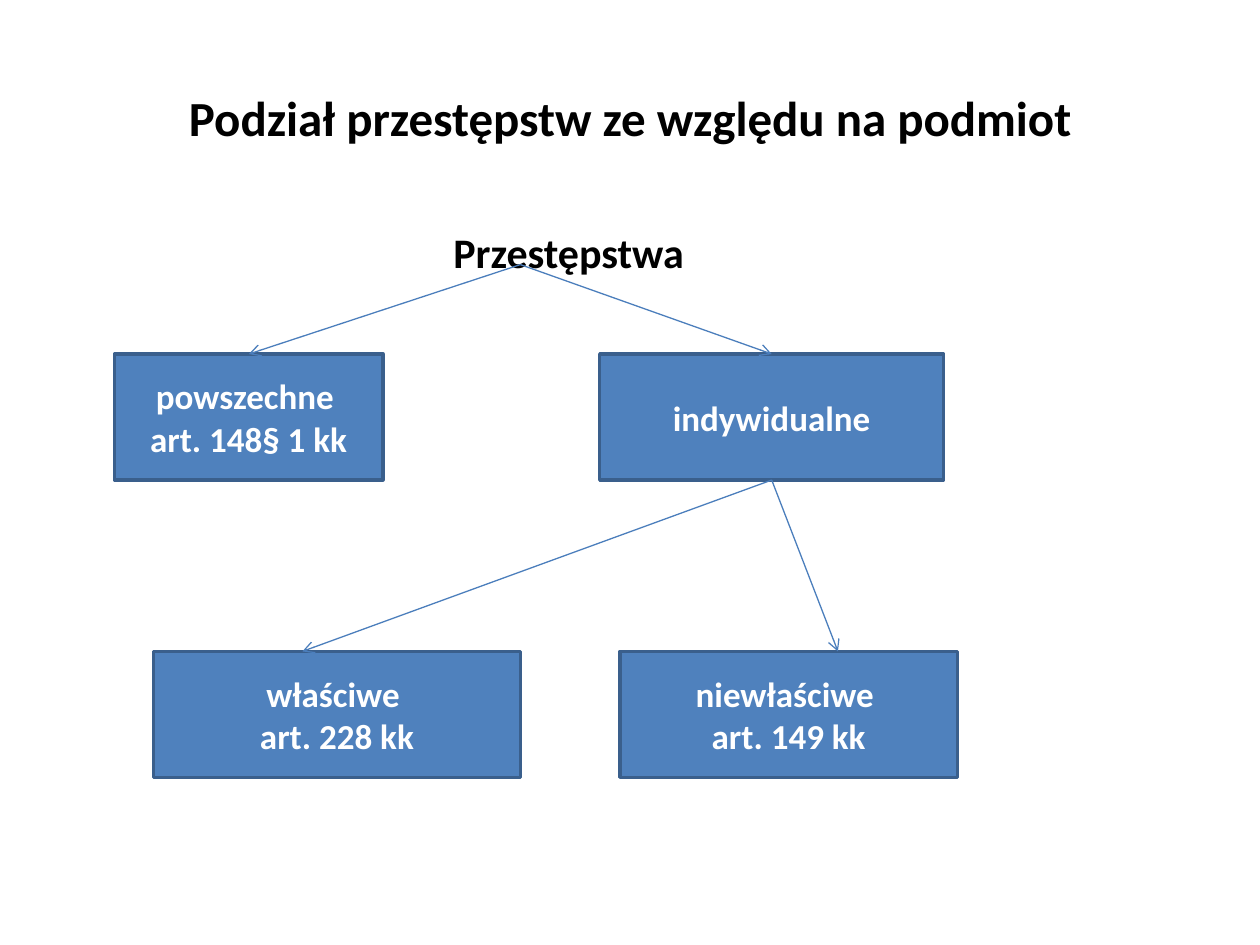
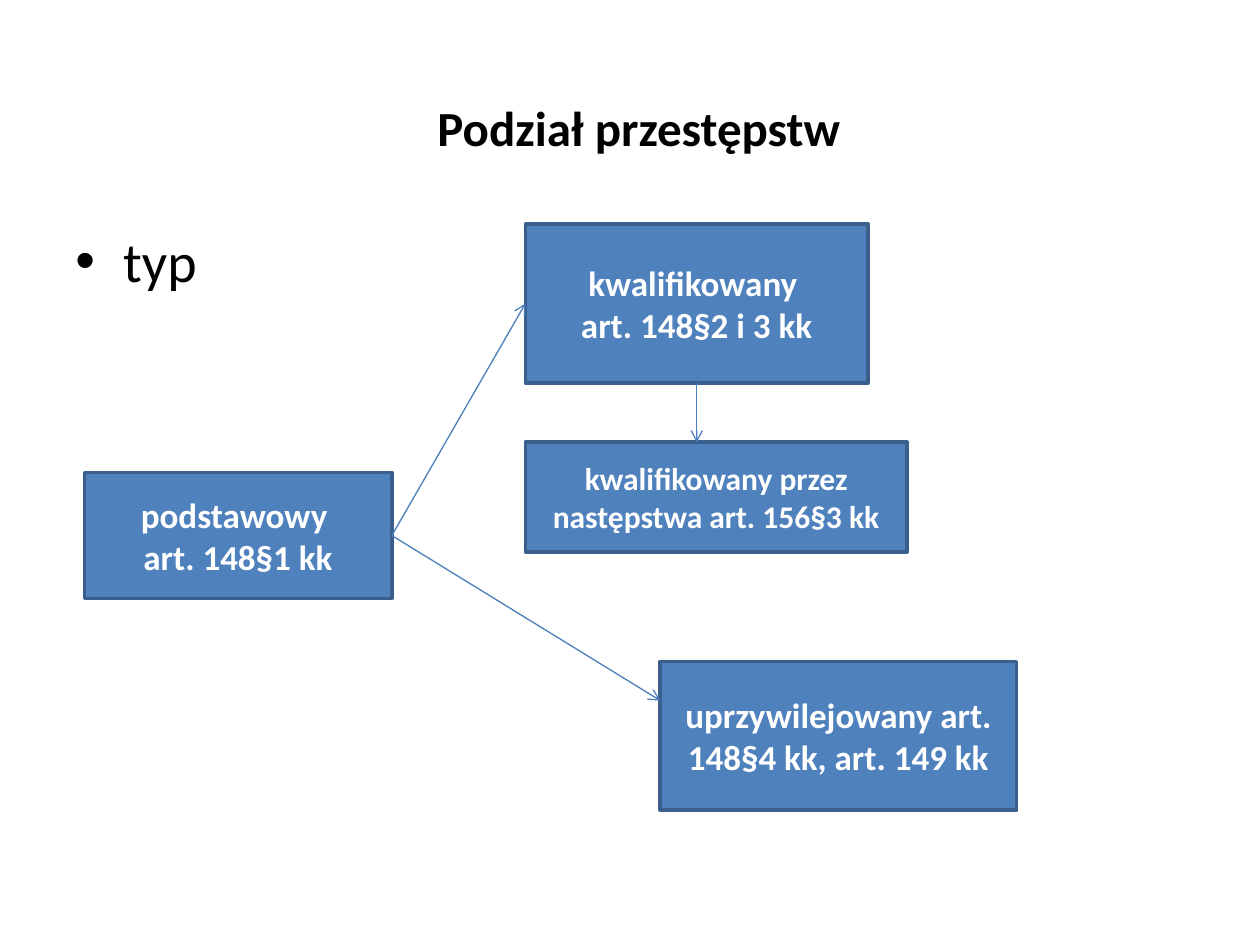
from lxml import etree
from pptx import Presentation
from pptx.dml.color import RGBColor
from pptx.enum import shapes, text
from pptx.oxml import ns
from pptx.util import Inches, Pt

FONT = "Calibri"
BLACK = RGBColor(0, 0, 0)
WHITE = RGBColor(255, 255, 255)
BLUE = RGBColor(0x4F, 0x81, 0xBD)
EDGE = RGBColor(0x3A, 0x5F, 0x8C)
LINE = RGBColor(0x4B, 0x7E, 0xBC)
TOP, LEFT, FOOT, RIGHT = range(4)  # connection sites of a rectangle


def write(frame, words, size=20, color=WHITE, bold=True,
          align=text.PP_ALIGN.CENTER, anchor=text.MSO_ANCHOR.MIDDLE):
    """Fill a text frame, one paragraph for each line of words."""
    frame.word_wrap = True
    frame.vertical_anchor = anchor
    frame.text = words
    for par in frame.paragraphs:
        par.alignment = align
        font = par.runs[0].font
        font.name, font.size, font.bold = FONT, Pt(size), bold
        font.color.rgb = color


def label(slide, words, left, top, wide, high, **style):
    area = slide.shapes.add_textbox(*map(Inches, (left, top, wide, high)))
    write(area.text_frame, words, color=BLACK, **style)
    return area.text_frame


def title(slide, words, left=0.5, top=0.3):
    label(slide, words, left, top, 9, 1.25, size=28)


def body(slide, words, indent, bullet=None, **style):
    frame = label(slide, words, 0.5, 1.75, 9, 4.95, anchor=text.MSO_ANCHOR.TOP,
                  align=text.PP_ALIGN.LEFT, **style)
    props = frame.paragraphs[0]._p.get_or_add_pPr()
    props.set("marL", str(Inches(indent)))
    if bullet:
        props.set("indent", str(-Inches(indent)))
        etree.SubElement(props, ns.qn("a:buFont")).set("typeface", "Arial")
        etree.SubElement(props, ns.qn("a:buChar")).set("char", bullet)


def box(slide, words, left, top, wide, high=1, **style):
    rect = slide.shapes.add_shape(shapes.MSO_SHAPE.RECTANGLE,
                                  *map(Inches, (left, top, wide, high)))
    rect.shadow.inherit = False
    rect.fill.solid()
    rect.fill.fore_color.rgb = BLUE
    rect.line.color.rgb = EDGE
    rect.line.width = Pt(2)
    write(rect.text_frame, words, **style)
    return rect


def arrow(slide, start, end, source=None, target=None):
    """Draw an arrow; source and target are (box, site) pairs to glue to."""
    link = slide.shapes.add_connector(shapes.MSO_CONNECTOR.STRAIGHT,
                                      *map(Inches, start + end))
    if source:
        link.begin_connect(*source)
    if target:
        link.end_connect(*target)
    link.line.color.rgb = LINE
    link.line.width = Pt(0.75)
    tip = etree.SubElement(link.line._get_or_add_ln(), ns.qn("a:tailEnd"))
    tip.set("type", "arrow")
    etree.SubElement(link._element.spPr, ns.qn("a:effectLst"))


def subject(slide):
    """Offences divided by who commits them."""
    title(slide, "Podział przestępstw ze względu na podmiot")
    body(slide, "Przestępstwa", 3, size=24)
    row, low, root, hub = 2.81, 5.17, (4.13, 2.1), (6.13, 3.81)
    common = box(slide, "powszechne \nart. 148§ 1 kk", 0.91, row, 2.13)
    single = box(slide, "indywidualne", 4.76, row, 2.73)
    box(slide, "właściwe \nart. 228 kk", 1.22, low, 2.91)
    box(slide, "niewłaściwe \nart. 149 kk", 4.92, low, 2.68)
    arrow(slide, root, (1.97, row), target=(common, TOP))
    arrow(slide, root, (6.13, row), target=(single, TOP))
    for x in (2.4, 6.65):
        arrow(slide, hub, (x, low), source=(single, FOOT))


def kinds(slide):
    """Basic, aggravated and privileged types of offence."""
    title(slide, "Podział przestępstw", left=0.57, top=0.38)
    body(slide, "typ", 0.38, bullet="•", size=32, bold=False)
    basic = box(slide, "podstawowy \nart. 148§1 kk", 0.67, 3.75, 2.44)
    grave = box(slide, "kwalifikowany \nart. 148§2 i 3 kk",
                4.17, 1.78, 2.72, 1.26)
    box(slide, "uprzywilejowany art. 148§4 kk, art. 149 kk",
        5.24, 5.25, 2.83, 1.18)
    box(slide, "kwalifikowany przez następstwa art. 156§3 kk",
        4.17, 3.51, 3.03, 0.87, size=18)
    hub = (3.11, 4.25)
    arrow(slide, hub, (4.17, 2.41), (basic, RIGHT), (grave, LEFT))
    arrow(slide, hub, (5.24, 5.56), (basic, RIGHT))
    arrow(slide, (5.53, 3.04), (5.53, 3.51), (grave, FOOT))


def main():
    deck = Presentation()
    deck.slide_width, deck.slide_height = Inches(10), Inches(7.5)
    for build in (subject, kinds):
        build(deck.slides.add_slide(deck.slide_layouts[6]))
    deck.save("out.pptx")


if __name__ == "__main__":
    main()
